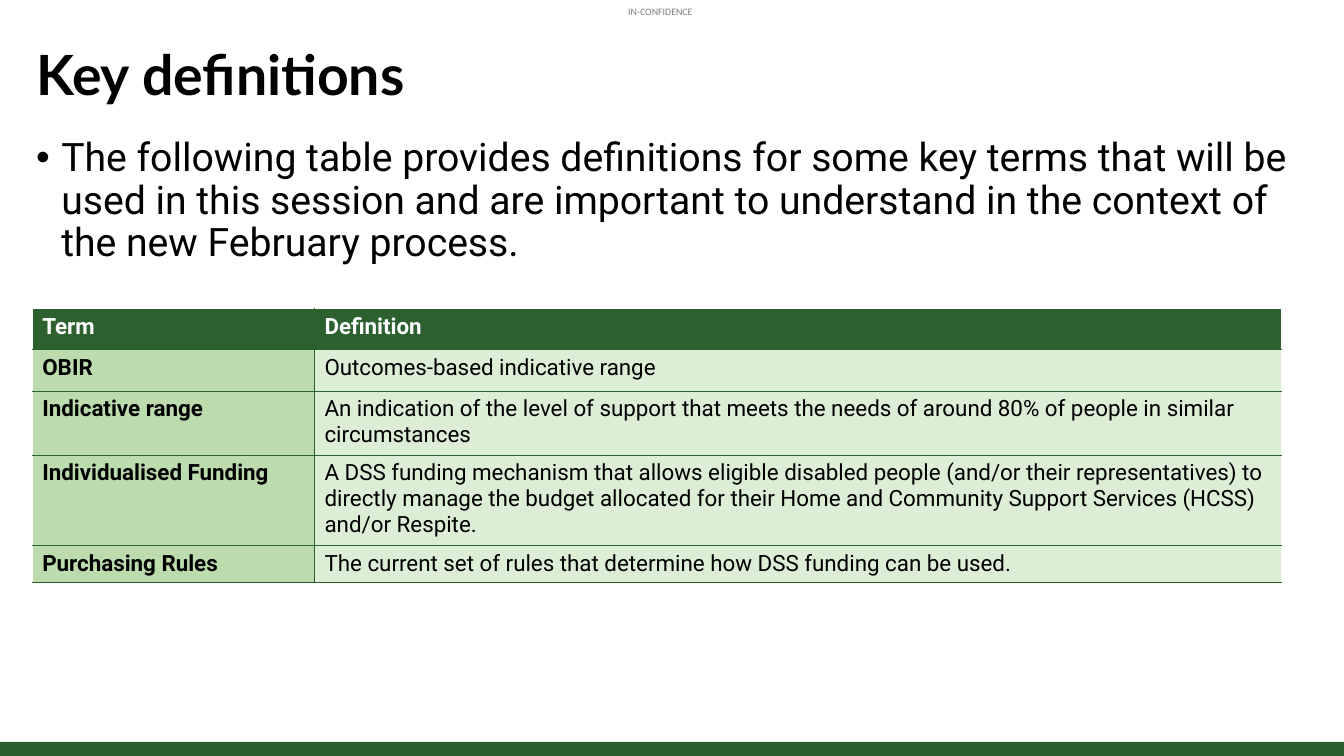
from dataclasses import dataclass

from lxml import etree
from pptx import Presentation
from pptx.dml.color import RGBColor
from pptx.enum.shapes import MSO_SHAPE
from pptx.enum.text import MSO_ANCHOR
from pptx.oxml.ns import qn
from pptx.util import Inches, Pt

RECTANGLE = MSO_SHAPE.RECTANGLE
TOP = MSO_ANCHOR.TOP
MIDDLE = MSO_ANCHOR.MIDDLE

SLIDE_WIDTH = Inches(13.333)
SLIDE_HEIGHT = Inches(7.5)
BLANK_LAYOUT = 6

COLOURS = {
    "black": "000000",
    "white": "FFFFFF",
    "footer": "2A602F",
    "header": "2C602F",
    "term": "BCDCAE",
    "definition": "DDEED6",
}


@dataclass(frozen=True)
class Area:
    """Percent shares of the slide's width and height."""

    left: float
    top: float
    width: float
    height: float

    def place(self) -> tuple[int, int, int, int]:
        return across(self.left), down(self.top), across(self.width), down(self.height)


@dataclass(frozen=True)
class Entry:
    term: str
    definition: str
    height: float


MARKING = Area(46.74, 0.67, 6.68, 1.6)
TITLE = Area(1.95, 5.47, 96.15, 9.47)
BODY = Area(1.95, 17.6, 96.15, 68.8)
FOOTER = Area(0, 98.13, 100, 1.87)
GLOSSARY = Area(2.4, 40.8, 92.94, 36.13)
TERM_WIDTH = 21

ENTRIES = [
    Entry("Term", "Definition", 5.47),
    Entry("OBIR", "Outcomes-based indicative range", 5.47),
    Entry(
        "Indicative range",
        "An indication of the level of support that meets the needs of around 80% "
        "of people in similar circumstances",
        5.47,
    ),
    Entry(
        "Individualised Funding",
        "A DSS funding mechanism that allows eligible disabled people (and/or their "
        "representatives) to directly manage the budget allocated for their Home and "
        "Community Support Services (HCSS) and/or Respite.",
        4.67,
    ),
    Entry(
        "Purchasing Rules",
        "The current set of rules that determine how DSS funding can be used.",
        4.67,
    ),
]


def across(share: float) -> int:
    return round(SLIDE_WIDTH * share / 100)


def down(share: float) -> int:
    return round(SLIDE_HEIGHT * share / 100)


def colour(name: str) -> RGBColor:
    return RGBColor.from_string(COLOURS[name])


def add_bullet(para) -> None:
    properties = para._p.get_or_add_pPr()
    properties.set("marL", str(Inches(0.25)))
    properties.set("indent", str(-Inches(0.25)))
    etree.SubElement(properties, qn("a:buFont"), typeface="Arial")
    etree.SubElement(properties, qn("a:buChar"), char="•")


def write(frame, text: str, *, font: str, size: float, ink: str = "black",
          bold: bool = False, bullet: bool = False, spacing: float = 1.0,
          opacity: int = 100) -> None:
    para = frame.paragraphs[0]
    if bullet:
        add_bullet(para)
    para.line_spacing = spacing
    span = para.add_run()
    span.text = text
    span.font.name = font
    span.font.size = Pt(size)
    span.font.bold = bold
    span.font.color.rgb = colour(ink)
    if opacity < 100:
        shade = span._r.find(".//" + qn("a:srgbClr"))
        etree.SubElement(shade, qn("a:alpha"), val=str(opacity * 1000))


def add_text(page, area: Area, text: str, *, anchor=TOP, wrap: bool = True,
             inset: bool = True, **style) -> None:
    frame = page.shapes.add_textbox(*area.place()).text_frame
    frame.word_wrap = wrap
    frame.vertical_anchor = anchor
    if not inset:
        frame.margin_left = frame.margin_top = 0
        frame.margin_right = frame.margin_bottom = 0
    write(frame, text, **style)


def add_border(cell, side: str, ink: str) -> None:
    width = Pt(1) if ink == "white" else Pt(0.75)
    line = etree.SubElement(cell._tc.get_or_add_tcPr(), qn(f"a:ln{side}"), w=str(width))
    fill = etree.SubElement(line, qn("a:solidFill"))
    etree.SubElement(fill, qn("a:srgbClr"), val=COLOURS[ink])


def fill_cell(cell, text: str, *, heading: bool, term: bool) -> None:
    borders = {
        "L": "white" if term else "header",
        "R": "header" if term else "white",
        "T": "white" if heading else "header",
        "B": "header",
    }
    for side, ink in borders.items():
        add_border(cell, side, ink)
    cell.fill.solid()
    fill = "header" if heading else "term" if term else "definition"
    cell.fill.fore_color.rgb = colour(fill)
    write(cell.text_frame, text, font="Roboto", size=16,
          ink="white" if heading else "black", bold=heading or term)


def add_glossary(page) -> None:
    holder = page.shapes.add_table(len(ENTRIES), 2, *GLOSSARY.place())
    table = holder.table
    table.columns[0].width = across(TERM_WIDTH)
    table.columns[1].width = across(GLOSSARY.width - TERM_WIDTH)
    for index, entry in enumerate(ENTRIES):
        table.rows[index].height = down(entry.height)
        for column, text in enumerate((entry.term, entry.definition)):
            fill_cell(table.cell(index, column), text,
                      heading=index == 0, term=column == 0)
    holder.height = down(GLOSSARY.height)


def add_footer(page) -> None:
    bar = page.shapes.add_shape(RECTANGLE, *FOOTER.place())
    bar.shadow.inherit = False
    bar.fill.solid()
    bar.fill.fore_color.rgb = colour("footer")
    bar.line.fill.background()


def main() -> None:
    deck = Presentation()
    deck.slide_width = SLIDE_WIDTH
    deck.slide_height = SLIDE_HEIGHT
    page = deck.slides.add_slide(deck.slide_layouts[BLANK_LAYOUT])
    add_text(page, MARKING, "IN-CONFIDENCE", font="Calibri", size=7.1,
             opacity=50, wrap=False, inset=False)
    add_footer(page)
    add_text(page, TITLE, "Key definitions", font="Lato", size=39.6,
             bold=True, spacing=0.9, anchor=MIDDLE)
    add_text(page, BODY,
             "The following table provides definitions for some key terms that will "
             "be used in this session and are important to understand in the context "
             "of the new February process.",
             font="Roboto", size=28, bullet=True, spacing=0.9)
    add_glossary(page)
    deck.save("out.pptx")


if __name__ == "__main__":
    main()
